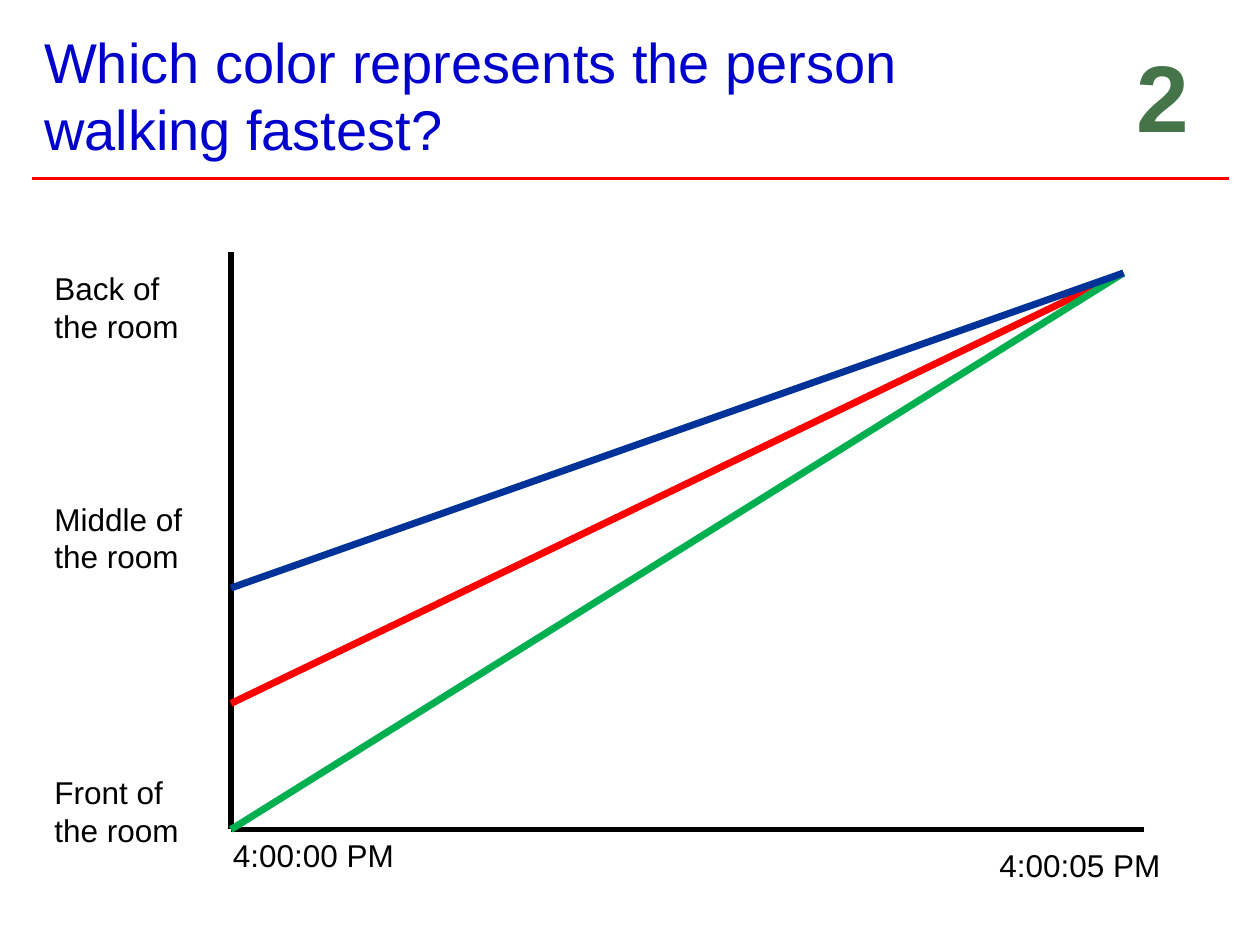
from dataclasses import dataclass

from lxml.etree import SubElement
from pptx import Presentation
from pptx.dml.color import RGBColor
from pptx.enum.shapes import MSO_CONNECTOR as Connector
from pptx.enum.text import MSO_ANCHOR as Anchor, MSO_AUTO_SIZE as AutoSize, PP_ALIGN as Align
from pptx.oxml.ns import qn
from pptx.slide import Slide
from pptx.text.text import TextFrame
from pptx.util import Pt

FONT = "Arial"
COLORS = {
    "title": "0000CC",
    "black": "000000",
    "red": "FF0000",
    "green": "00B050",
    "blue": "003399",
    "number": "457448",
}

# Graph corners and the point where the walkers meet
AXIS_LEFT, AXIS_TOP, AXIS_RIGHT, AXIS_BOTTOM = 132, 144, 654, 474
MEETING_POINT = (642, 156)


@dataclass
class Line:
    start: tuple[float, float]
    end: tuple[float, float]
    color: str
    width: float


@dataclass
class Label:
    text: str
    left: float
    top: float
    width: float
    height: float
    size: float = 18
    color: str = "black"
    bold: bool = False
    align: Align = Align.LEFT
    wrap: bool = True


def walker(start_y: float, color: str) -> Line:
    return Line((AXIS_LEFT, start_y), MEETING_POINT, color, 4)


def room_label(part: str, top: float) -> Label:
    return Label(f"{part} of the room", 24, top, 90, 51)


def time_label(time: str, left: float, top: float) -> Label:
    return Label(time, left, top, 108, 29)


def write_text(frame: TextFrame, text: str, size: float, color: str,
               bold: bool = False, align: Align = Align.LEFT) -> None:
    frame.text = text
    paragraph = frame.paragraphs[0]
    paragraph.alignment = align
    font = paragraph.font
    font.name, font.size, font.bold = FONT, Pt(size), bold
    font.color.rgb = RGBColor.from_string(COLORS[color])


def draw_line(slide: Slide, line: Line) -> None:
    points = [Pt(value) for value in (*line.start, *line.end)]
    connector = slide.shapes.add_connector(Connector.STRAIGHT, *points)
    connector.line.color.rgb = RGBColor.from_string(COLORS[line.color])
    connector.line.width = Pt(line.width)
    SubElement(connector._element.spPr, qn("a:effectLst"))


def draw_label(slide: Slide, label: Label) -> None:
    box = slide.shapes.add_textbox(
        Pt(label.left), Pt(label.top), Pt(label.width), Pt(label.height))
    box.text_frame.word_wrap = label.wrap
    write_text(box.text_frame, label.text, label.size, label.color, label.bold, label.align)


def set_title(slide: Slide, text: str) -> None:
    title = slide.shapes.title
    title.left, title.top, title.width, title.height = Pt(18), Pt(54), Pt(558), Pt(42)
    frame = title.text_frame
    frame.auto_size = AutoSize.NONE
    frame.word_wrap = True
    frame.vertical_anchor = Anchor.BOTTOM
    write_text(frame, text, 32, "title")


LINES = [
    # Rule under the title
    Line((18, 102), (702, 102), "red", 1.5),
    # Axes
    Line((AXIS_LEFT, AXIS_TOP), (AXIS_LEFT, AXIS_BOTTOM), "black", 3),
    Line((AXIS_RIGHT, AXIS_BOTTOM), (AXIS_LEFT, AXIS_BOTTOM), "black", 3),
    # Walkers
    walker(402, "red"),
    walker(AXIS_BOTTOM, "green"),
    walker(336, "blue"),
]

LABELS = [
    room_label("Back", 150),
    room_label("Middle", 282),
    room_label("Front", 438),
    time_label("4:00:00 PM", 126, 474),
    time_label("4:00:05 PM", 564, 480),
    # Question number
    Label("2", 642, 18, 45, 73, 54, "number", True, Align.CENTER, False),
]


def main() -> None:
    presentation = Presentation()
    presentation.slide_width, presentation.slide_height = Pt(720), Pt(540)
    slide = presentation.slides.add_slide(presentation.slide_layouts[5])

    set_title(slide, "Which color represents the person walking fastest?")
    for line in LINES:
        draw_line(slide, line)
    for label in LABELS:
        draw_label(slide, label)

    presentation.save("out.pptx")


if __name__ == "__main__":
    main()
